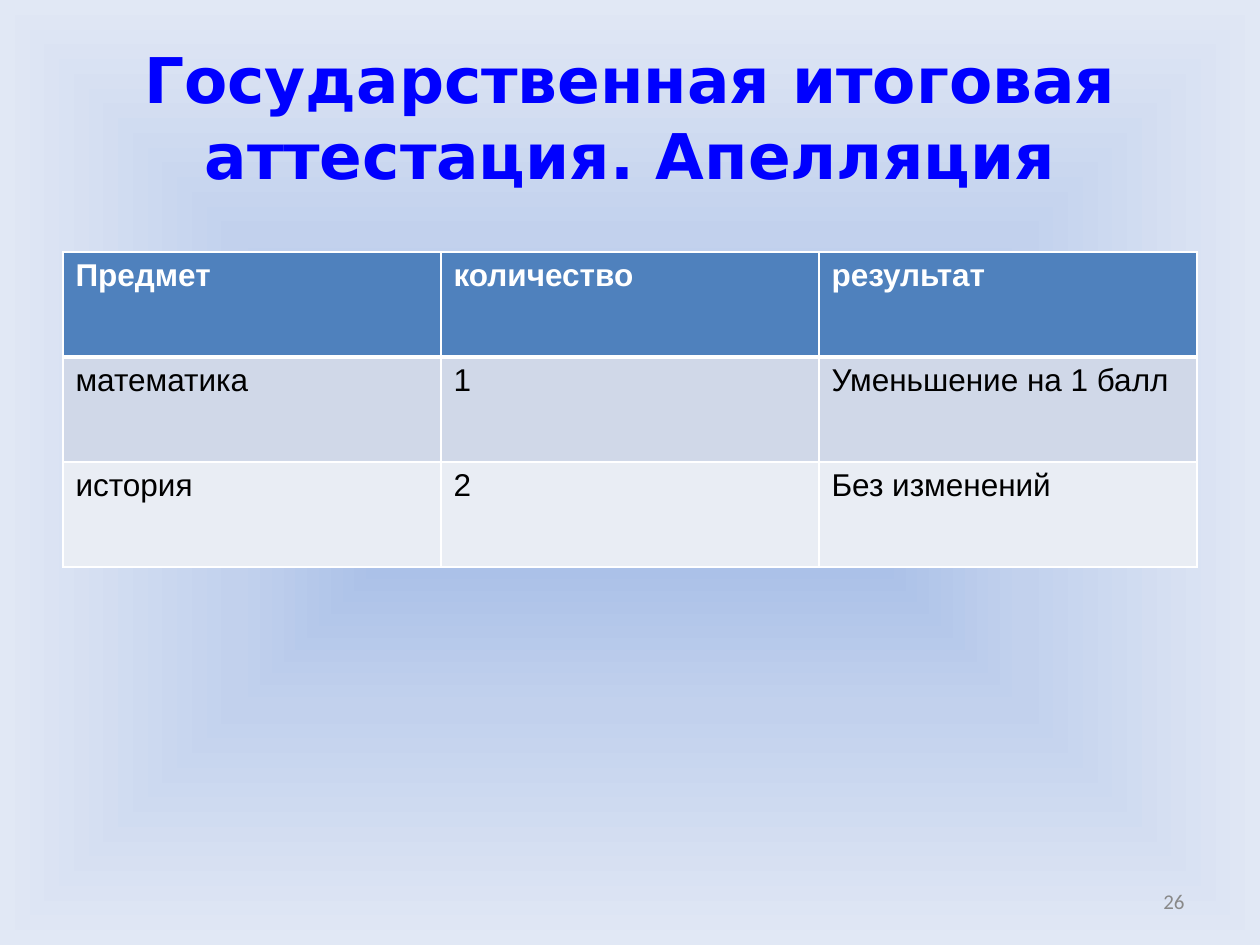
"""Build the slide on exam appeals with its table of results."""
import pptx
import pptx.dml.color
import pptx.enum.text
import pptx.oxml
import pptx.oxml.ns
import pptx.util

Pt = pptx.util.Pt
PP = pptx.enum.text.PP_ALIGN
ANCHOR = pptx.enum.text.MSO_ANCHOR
NS = pptx.oxml.ns.nsdecls("a", "p")

THEME = {
    "title": {"name": "DejaVu Sans", "size": Pt(36), "bold": True, "color": "0000FF"},
    "header": {"name": "Arial", "size": Pt(18), "bold": True, "color": "FFFFFF"},
    "body": {"name": "Arial", "size": Pt(18), "bold": False, "color": "000000"},
    "number": {"name": "Calibri", "size": Pt(12), "bold": False, "color": "898989"},
    "fills": ["4F81BD", "D0D8E8", "E9EDF4"],
    "border": "FFFFFF",
    "background": {0: "9AB5E4", 50: "C2D1ED", 100: "E1E8F5"},
}


def write(tf, text, style, align):
    p = tf.paragraphs[0]
    p.alignment = align
    r = p.add_run()
    r.text = text
    for key, value in THEME[style].items():
        if key == "color":
            r.font.color.rgb = pptx.dml.color.RGBColor.from_string(value)
        else:
            setattr(r.font, key, value)


def add_borders(cell, widths):
    tcPr = cell._tc.get_or_add_tcPr()
    for i, (side, width) in enumerate(widths.items()):
        tcPr.insert(i, pptx.oxml.parse_xml(
            f'<a:ln{side} {NS} w="{Pt(width)}"><a:solidFill>'
            f'<a:srgbClr val="{THEME["border"]}"/></a:solidFill></a:ln{side}>'))


prs = pptx.Presentation()
prs.slide_width, prs.slide_height = Pt(720), Pt(540)
s = prs.slides.add_slide(prs.slide_layouts[5])

stops = "".join(f'<a:gs pos="{pos * 1000}"><a:srgbClr val="{color}"/></a:gs>'
                for pos, color in THEME["background"].items())
s._element.cSld.insert(0, pptx.oxml.parse_xml(
    f'<p:bg {NS}><p:bgPr><a:gradFill rotWithShape="1"><a:gsLst>{stops}</a:gsLst>'
    '<a:path path="shape"><a:fillToRect l="50000" t="50000" r="50000" b="50000"/></a:path>'
    '</a:gradFill><a:effectLst/></p:bgPr></p:bg>'))

frame = {"word_wrap": True, "auto_size": pptx.enum.text.MSO_AUTO_SIZE.NONE,
         "vertical_anchor": ANCHOR.MIDDLE}
title = s.shapes.title
number = s.shapes.add_textbox(0, 0, 0, 0)
texts = [
    (title, (36, 21.6, 648, 90), "Государственная итоговая аттестация. Апелляция", "title", PP.CENTER),
    (number, (516, 500.5, 168, 28.75), "26", "number", PP.RIGHT),
]
for sp, box, text, style, align in texts:
    for key, value in zip(("left", "top", "width", "height"), box):
        setattr(sp, key, Pt(value))
    for key, value in frame.items():
        setattr(sp.text_frame, key, value)
    write(sp.text_frame, text, style, align)

rows = [
    ("Предмет", "количество", "результат"),
    ("математика", "1", "Уменьшение на 1 балл"),
    ("история", "2", "Без изменений"),
]
table = s.shapes.add_table(3, 3, Pt(36), Pt(144), Pt(648), Pt(180)).table
for i, row in enumerate(rows):
    for j, text in enumerate(row):
        cell = table.cell(i, j)
        write(cell.text_frame, text, "body" if i else "header", PP.LEFT)
        cell.fill.solid()
        cell.fill.fore_color.rgb = pptx.dml.color.RGBColor.from_string(THEME["fills"][i])
        add_borders(cell, {"L": 1, "R": 1, "T": 3 if i == 1 else 1, "B": 3 if i == 0 else 1})

prs.save("out.pptx")
